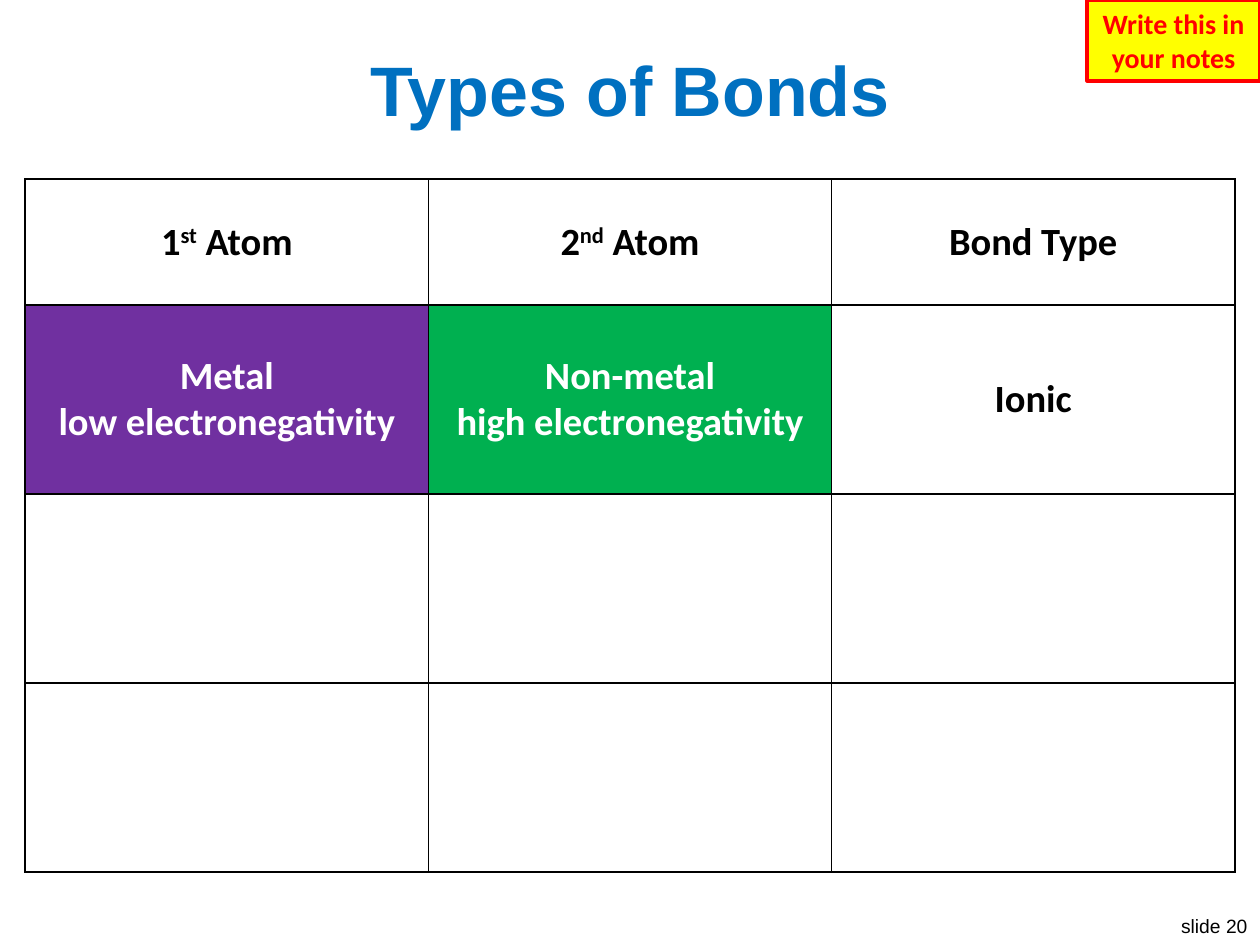
"""Build the Types of Bonds slide with its partly filled table."""
from lxml import etree
from pptx import Presentation
from pptx import util as u
from pptx.dml.color import RGBColor
from pptx.enum import shapes, text
from pptx.oxml.ns import qn

HUES = {
    "black": "000000", "white": "FFFFFF", "blue": "0070C0", "purple": "7030A0",
    "green": "00B050", "yellow": "FFFF00", "red": "FF0000",
}
TITLE = "Types of Bonds"
NOTE = "Write this in your notes"
NUMBER = "slide 20"
ROWS = [
    ["1^st^ Atom", "2^nd^ Atom", "Bond Type"],
    ["Metal\nlow electronegativity", "Non-metal\nhigh electronegativity", "Ionic"],
    [""] * 3,
    [""] * 3,
]
FILLS = {(1, 0): "purple", (1, 1): "green"}
HEIGHTS = [1, 1.5, 1.5, 1.5]
WIDTH = 3.2
CENTER, RIGHT = text.PP_ALIGN.CENTER, text.PP_ALIGN.RIGHT


def rgb(hue):
    """Return the colour with this name."""
    return RGBColor.from_string(HUES[hue])


def box(*sizes):
    """Turn numbers into inch lengths."""
    return [u.Inches(size) for size in sizes]


def style(frame, size, face, hue, bold=True, align=CENTER):
    """Format every paragraph and run of a text frame."""
    for para in frame.paragraphs:
        para.alignment = align
        for run in para.runs:
            run.font.size, run.font.name, run.font.bold = u.Pt(size), face, bold
            run.font.color.rgb = rgb(hue)


def write(frame, words):
    """Fill a frame line by line, raising the parts between carets."""
    frame.text = words.replace("^", "")
    for para, line in zip(frame.paragraphs, words.split("\n")):
        if "^" in line:
            para.clear()
            for spot, part in enumerate(line.split("^")):
                run = para.add_run()
                run.text = part
                if spot % 2:
                    run.font._element.set("baseline", "30000")


def edge(cell):
    """Draw a thin black border on all four sides of a cell."""
    props = cell._tc.get_or_add_tcPr()
    for side in ("a:lnL", "a:lnR", "a:lnT", "a:lnB"):
        line = etree.SubElement(props, qn(side), w=str(u.Pt(1)))
        fill = etree.SubElement(line, qn("a:solidFill"))
        etree.SubElement(fill, qn("a:srgbClr"), val=HUES["black"])


def add_grid(slide):
    """Add the table of atoms and bond types."""
    count = len(ROWS[0])
    area = box(0.2, 1.42, WIDTH * count, sum(HEIGHTS))
    table = slide.shapes.add_table(len(ROWS), count, *area).table
    table.first_row = table.horz_banding = False
    for row, height in zip(table.rows, HEIGHTS):
        row.height = u.Inches(height)
    for r, line in enumerate(ROWS):
        for c, words in enumerate(line):
            cell = table.cell(r, c)
            cell.vertical_anchor = text.MSO_ANCHOR.MIDDLE
            edge(cell)
            hue = FILLS.get((r, c))
            if hue:
                cell.fill.solid()
                cell.fill.fore_color.rgb = rgb(hue)
            else:
                cell.fill.background()
            write(cell.text_frame, words)
            style(cell.text_frame, 22, "Calibri", "white" if hue else "black")


def add_note(slide):
    """Add the yellow reminder in the corner."""
    note = slide.shapes.add_shape(shapes.MSO_SHAPE.RECTANGLE, *box(8.63, 0, 1.37, 0.64))
    note.shadow.inherit = False
    note.fill.solid()
    note.fill.fore_color.rgb = rgb("yellow")
    note.line.color.rgb = rgb("red")
    note.line.width = u.Pt(2.25)
    note.text_frame.text = NOTE
    note.text_frame.word_wrap = True
    style(note.text_frame, 16, "Calibri", "red")


def main():
    """Build and save the slide."""
    deck = Presentation()
    deck.slide_width, deck.slide_height = box(10, 7.5)
    slide = deck.slides.add_slide(deck.slide_layouts[5])
    number = slide.shapes.add_textbox(*box(9.25, 7.21, 0.75, 0.29)).text_frame
    number.text = NUMBER
    number.word_wrap = False
    style(number, 11, "Arial", "black", False, RIGHT)
    title = slide.shapes.title
    title.left, title.top, title.width, title.height = box(0.2, 0.3, 9.6, 0.8)
    title.text_frame.text = TITLE
    title.text_frame.vertical_anchor = text.MSO_ANCHOR.MIDDLE
    style(title.text_frame, 40, "Arial", "blue")
    add_grid(slide)
    add_note(slide)
    deck.save("out.pptx")


if __name__ == "__main__":
    main()
